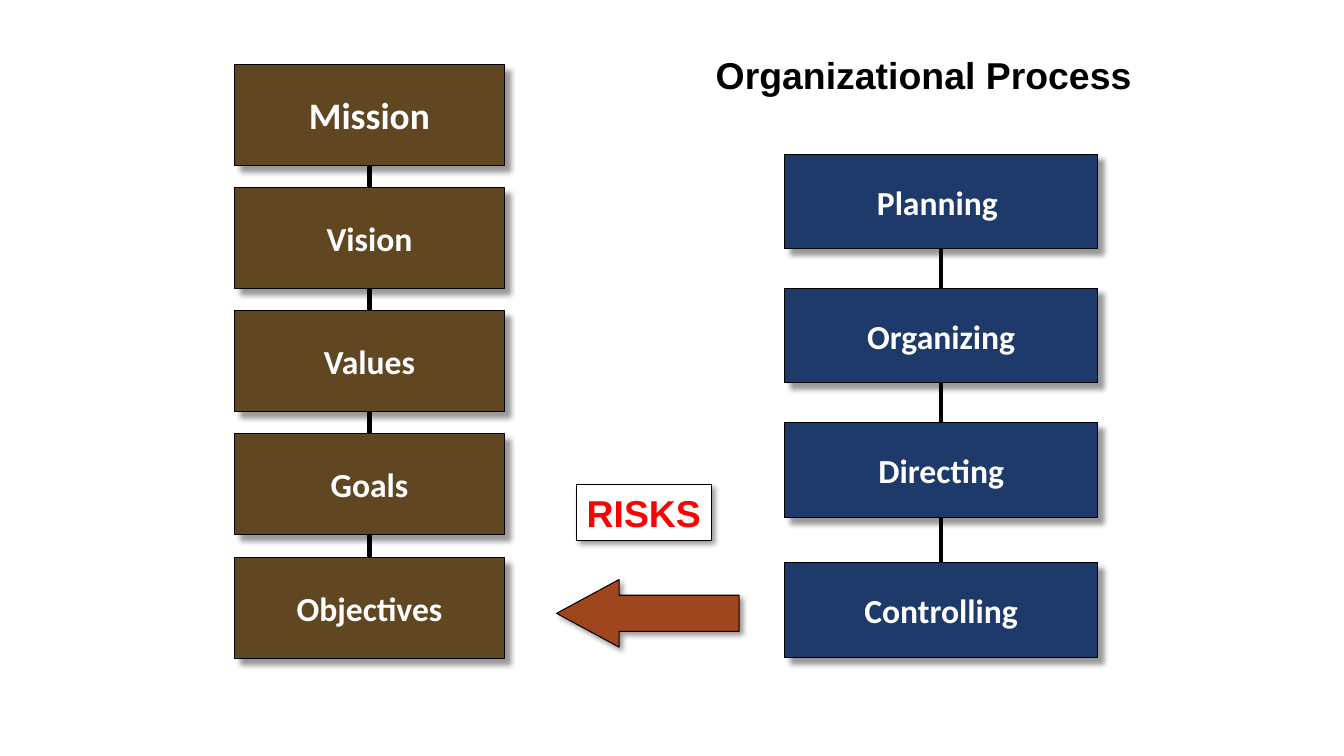
from dataclasses import dataclass

from lxml import etree
from pptx import Presentation
from pptx.dml.color import RGBColor
from pptx.enum.shapes import MSO_CONNECTOR, MSO_SHAPE
from pptx.enum.text import MSO_ANCHOR, MSO_AUTO_SIZE, PP_ALIGN
from pptx.oxml.ns import qn
from pptx.util import Inches, Pt

RECTANGLE = MSO_SHAPE.RECTANGLE
LEFT_ARROW = MSO_SHAPE.LEFT_ARROW
STRAIGHT = MSO_CONNECTOR.STRAIGHT
MIDDLE = MSO_ANCHOR.MIDDLE
TOP = MSO_ANCHOR.TOP
CENTER = PP_ALIGN.CENTER
LEFT = PP_ALIGN.LEFT
GROW = MSO_AUTO_SIZE.SHAPE_TO_FIT_TEXT
FIXED = MSO_AUTO_SIZE.NONE


@dataclass(frozen=True)
class Theme:
    brown: str = "614622"
    navy: str = "1E3A6A"
    rust: str = "9F461F"
    red: str = "FF0000"
    black: str = "000000"
    white: str = "FFFFFF"
    heading_font: str = "Arial"
    step_font: str = "Calibri"
    large: float = 26.7
    regular: float = 24
    outline: float = 0.75
    spine: float = 3
    far_shadow: float = 6
    near_shadow: float = 3


@dataclass(frozen=True)
class Box:
    left: float
    top: float
    width: float
    height: float

    @property
    def bottom(self):
        return self.top + self.height

    @property
    def center(self):
        return self.left + self.width / 2

    def lengths(self):
        return [Inches(v) for v in (self.left, self.top, self.width, self.height)]


THEME = Theme()


def fill_shadow(effects, distance):
    shadow = etree.SubElement(
        effects, qn("a:outerShdw"), blurRad=str(Pt(4)), dist=str(Pt(distance)),
        dir="2700000", algn="tl", rotWithShape="0")
    color = etree.SubElement(shadow, qn("a:srgbClr"), val=THEME.black)
    etree.SubElement(color, qn("a:alpha"), val="40000")


def write(shape, text, color, font_name, size, anchor, align, autosize, wrap):
    frame = shape.text_frame
    frame.word_wrap = wrap
    frame.auto_size = autosize
    frame.vertical_anchor = anchor
    paragraph = frame.paragraphs[0]
    paragraph.alignment = align
    run = paragraph.add_run()
    run.text = text
    run.font.color.rgb = RGBColor.from_string(color)
    for name, value in {"name": font_name, "size": Pt(size), "bold": True}.items():
        setattr(run.font, name, value)
    return run


def write_heading(shape, text, color):
    return write(shape, text, color, THEME.heading_font, THEME.large,
                 TOP, LEFT, GROW, False)


def add_block(slide, kind, box, color, shadow_distance):
    block = slide.shapes.add_shape(kind, *box.lengths())
    block.fill.solid()
    block.fill.fore_color.rgb = RGBColor.from_string(color)
    block.line.color.rgb = RGBColor.from_string(THEME.black)
    block.line.width = Pt(THEME.outline)
    block.shadow.inherit = False
    fill_shadow(block.element.spPr.find(qn("a:effectLst")), shadow_distance)
    return block


def add_spine(slide, x, top, bottom):
    spine = slide.shapes.add_connector(
        STRAIGHT, Inches(x), Inches(top), Inches(x), Inches(bottom))
    spine.line.color.rgb = RGBColor.from_string(THEME.black)
    spine.line.width = Pt(THEME.spine)
    etree.SubElement(spine.element.spPr, qn("a:effectLst"))


def add_chain(slide, box, steps, step_height, pitch, overlap, color):
    last_top = box.bottom - step_height
    add_spine(slide, box.center, box.top + step_height - overlap,
              last_top + step_height / 2)
    tops = [box.top + pitch * i for i in range(len(steps) - 1)] + [last_top]
    for top, (text, size) in zip(tops, steps):
        step_box = Box(box.left, top, box.width, step_height)
        step = add_block(slide, RECTANGLE, step_box, color, THEME.far_shadow)
        write(step, text, THEME.white, THEME.step_font, size,
              MIDDLE, CENTER, FIXED, True)


def add_heading(slide, box, text):
    heading = slide.shapes.add_textbox(*box.lengths())
    run = write_heading(heading, text, THEME.black)
    effects = etree.Element(qn("a:effectLst"))
    fill_shadow(effects, THEME.near_shadow)
    run.font.fill
    run._r.rPr.find(qn("a:latin")).addprevious(effects)


def add_risks(slide, box):
    arrow_height, label_width, label_height = 0.67, 1.34, 0.55
    arrow_box = Box(box.left, box.bottom - arrow_height, box.width, arrow_height)
    arrow = add_block(slide, LEFT_ARROW, arrow_box, THEME.rust, THEME.near_shadow)
    arrow.adjustments[0] = 0.535
    arrow.adjustments[1] = 0.925
    label_box = Box(box.left + 0.2, box.top, label_width, label_height)
    label = add_block(slide, RECTANGLE, label_box, THEME.white, THEME.near_shadow)
    write_heading(label, "RISKS", THEME.red)


def main():
    deck = Presentation()
    deck.slide_width, deck.slide_height = Inches(13.33), Inches(7.5)
    slide = deck.slides.add_slide(deck.slide_layouts[6])
    direction = [("Mission", THEME.large)] + [
        (name, THEME.regular) for name in ("Vision", "Values", "Goals", "Objectives")]
    process = [(name, THEME.regular) for name in
               ("Planning ", "Organizing", "Directing", "Controlling")]
    add_chain(slide, Box(2.33, 0.64, 2.67, 5.89), direction, 1, 1.22, 0.22, THEME.brown)
    add_chain(slide, Box(7.78, 1.53, 3.11, 4.99), process, 0.94, 1.33, 0.11, THEME.navy)
    add_heading(slide, Box(7, 0.47, 4.36, 0.55), "Organizational Process")
    add_risks(slide, Box(5.52, 4.81, 1.81, 1.61))
    deck.save("out.pptx")


if __name__ == "__main__":
    main()
